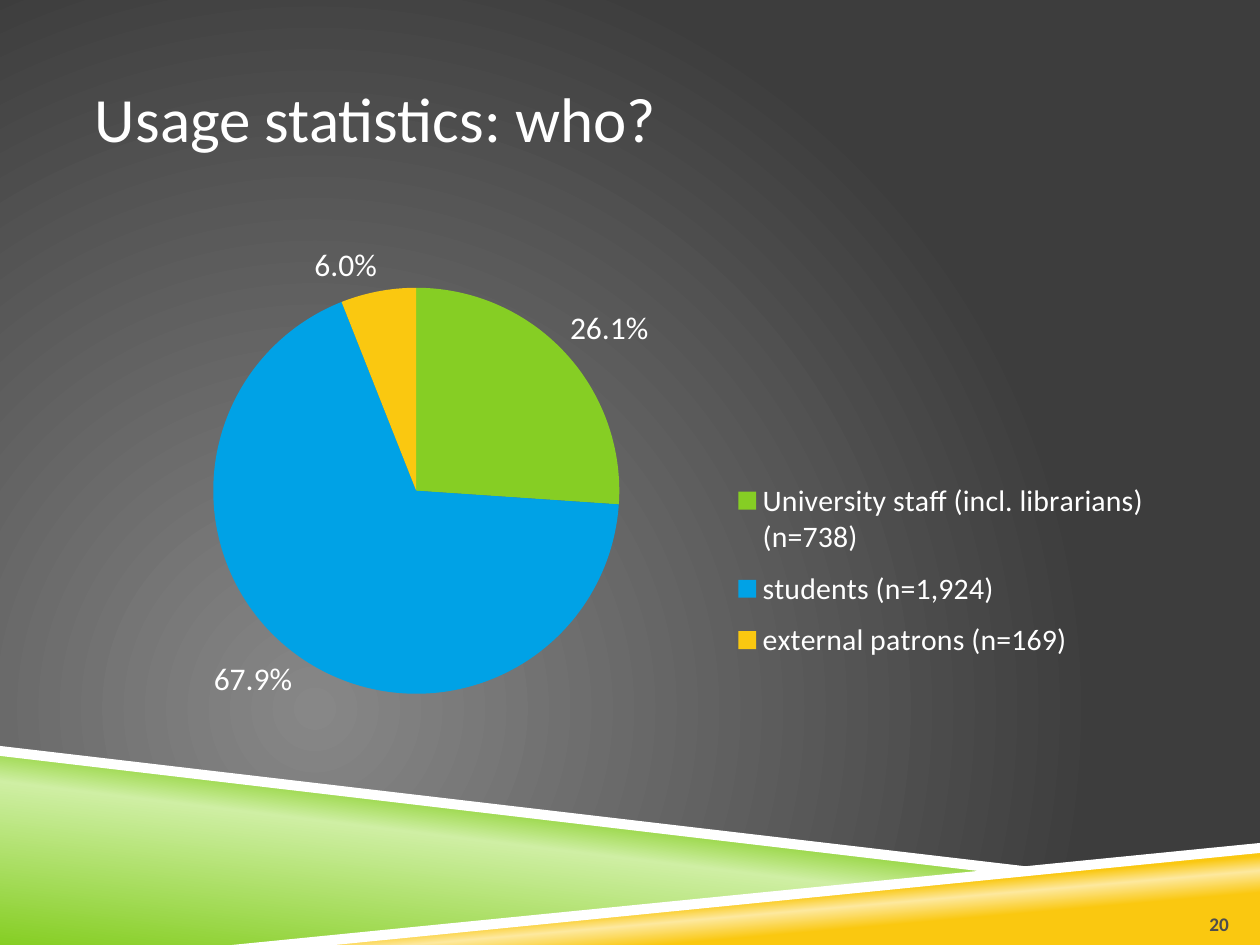
from lxml import etree
from pptx import Presentation
from pptx.chart.data import CategoryChartData
from pptx.dml.color import RGBColor
from pptx.enum.chart import XL_CHART_TYPE, XL_LABEL_POSITION, XL_LEGEND_POSITION
from pptx.enum.text import MSO_ANCHOR, PP_ALIGN
from pptx.oxml import parse_xml
from pptx.oxml.ns import nsdecls, qn
from pptx.util import Pt

PIE, OUTSIDE = XL_CHART_TYPE.PIE, XL_LABEL_POSITION.OUTSIDE_END
LEGEND_RIGHT = XL_LEGEND_POSITION.RIGHT
MIDDLE, BOTTOM = MSO_ANCHOR.MIDDLE, MSO_ANCHOR.BOTTOM
LEFT, RIGHT = PP_ALIGN.LEFT, PP_ALIGN.RIGHT

SCALE = 914400 / 126  # EMU per px
WIDTH, HEIGHT = 1260, 945
FONT = "Calibri"
WHITE = RGBColor(0xFF, 0xFF, 0xFF)
GREY = RGBColor(0x87, 0x87, 0x87)
CHARCOAL = RGBColor(0x3D, 0x3D, 0x3D)
NUMBER_GREY = RGBColor(0x4D, 0x4D, 0x4D)
GREEN = RGBColor(0x86, 0xCE, 0x24)
PALE_GREEN = RGBColor(0xCF, 0xEF, 0xA4)
BLUE = RGBColor(0x00, 0xA2, 0xE6)
YELLOW = RGBColor(0xFA, 0xC8, 0x10)
PALE_YELLOW = RGBColor(0xFD, 0xE9, 0x9F)

GROUPS = [
    ("University staff (incl. librarians) (n=738)", 26.1, GREEN),
    ("students (n=1,924)", 68, BLUE),
    ("external patrons (n=169)", 6, YELLOW),
]


def px(n):
    return round(n * SCALE)


def set_gradient(owner, fill, stops, angle=None):
    """Linear gradient at an angle in degrees, or a circular one without it."""
    fill.gradient()
    grad = next(owner.iter(qn("a:gradFill")))
    for child in list(grad):
        grad.remove(child)
    gs_list = etree.SubElement(grad, qn("a:gsLst"))
    for pos, color in stops:
        gs = etree.SubElement(gs_list, qn("a:gs"), pos=str(pos * 1000))
        etree.SubElement(gs, qn("a:srgbClr"), val=str(color))
    if angle is not None:
        etree.SubElement(grad, qn("a:lin"), ang=str(angle * 60000), scaled="0")
    else:
        circle = etree.SubElement(grad, qn("a:path"), path="circle")
        etree.SubElement(circle, qn("a:fillToRect"),
                         l="50000", t="100000", r="100000", b="50000")


def add_polygon(s, points):
    builder = s.shapes.build_freeform(*points[0], scale=SCALE)
    builder.add_line_segments(points[1:], close=True)
    sp = builder.convert_to_shape()
    sp.shadow.inherit = False
    sp.line.fill.background()
    return sp


def add_bands(s, w, h):
    """Green and yellow wedges with white edges along the foot of a w by h page."""
    wedges = [
        ([(0, h - 193), (998, h - 73), (252, h), (0, h)],
         [(0, GREEN), (52, PALE_GREEN), (66, GREEN)], 277),
        ([(250, h), (w, h - 98), (w, h)],
         [(28, YELLOW), (40, PALE_YELLOW), (48, YELLOW)], 265),
    ]
    edges = [
        [(0, h - 199), (0, h - 189), (995, h - 72), (1048, h - 76)],
        [(w, h - 102), (232, h), (335, h), (w, h - 92)],
    ]
    for points, stops, angle in wedges:
        sp = add_polygon(s, points)
        set_gradient(sp._element, sp.fill, stops, angle)
    for points in edges:
        sp = add_polygon(s, points)
        sp.fill.solid()
        sp.fill.fore_color.rgb = WHITE


def set_text(sp, text, size, color, align, anchor, bold=False, bottom=0):
    tf = sp.text_frame
    tf.word_wrap = True
    tf.vertical_anchor = anchor
    tf.margin_left = tf.margin_right = 0
    tf.margin_top, tf.margin_bottom = px(6), px(bottom)
    p = tf.paragraphs[0]
    p.text = text
    p.alignment = align
    p.font.name, p.font.size, p.font.bold = FONT, Pt(size), bold
    p.font.color.rgb = color


def set_font(font, size):
    font.name, font.size = FONT, Pt(size)
    font.color.rgb = WHITE


def add_title(s, x, y, w, h):
    title = s.shapes.title
    title.left, title.top, title.width, title.height = map(px, (x, y, w, h))
    set_text(title, "Usage statistics: who?", 36, WHITE, LEFT, MIDDLE, bottom=6)


def chart_layout(x, y, w, h, inner=False):
    """Manual layout in fractions of the chart area."""
    target = '<c:layoutTarget val="inner"/>' if inner else ""
    values = zip("xywh", (x, y, w, h))
    return parse_xml(
        f'<c:layout {nsdecls("c")}><c:manualLayout>{target}'
        '<c:xMode val="edge"/><c:yMode val="edge"/>'
        + "".join(f'<c:{k} val="{v}"/>' for k, v in values)
        + "</c:manualLayout></c:layout>")


def replace_layout(parent, layout, index):
    for old in parent.findall(qn("c:layout")):
        parent.remove(old)
    parent.insert(index, layout)


def add_usage_pie(s, x, y, w, h):
    names, values, colors = zip(*GROUPS)
    data = CategoryChartData()
    data.categories = names
    data.add_series("Series 1", values)
    chart = s.shapes.add_chart(PIE, *map(px, (x, y, w, h)), data).chart
    chart.has_title = False
    set_font(chart.font, 18)

    plot = chart.plots[0]
    for i, color in enumerate(colors):
        fill = plot.series[0].points[i].format.fill
        fill.solid()
        fill.fore_color.rgb = color
    plot.has_data_labels = True
    labels = plot.data_labels
    labels.show_percentage, labels.show_value = True, False
    labels.number_format, labels.number_format_is_linked = "0.0%", False
    labels.position = OUTSIDE
    set_font(labels.font, 18)

    chart.has_legend = True
    legend = chart.legend
    legend.position, legend.include_in_layout = LEGEND_RIGHT, False
    set_font(legend.font, 17)
    plot_area = next(chart._chartSpace.iter(qn("c:plotArea")))
    replace_layout(plot_area, chart_layout(0.11, 0.13, 0.38, 0.79, inner=True), 0)
    replace_layout(legend._element, chart_layout(0.59, 0.48, 0.4, 0.4), 1)


def add_page_number(s, x, y, w, h):
    box = s.shapes.add_textbox(*map(px, (x, y, w, h)))
    set_text(box, "20", 11, NUMBER_GREY, RIGHT, BOTTOM, bold=True)


def main():
    prs = Presentation()
    prs.slide_width, prs.slide_height = px(WIDTH), px(HEIGHT)
    s = prs.slides.add_slide(prs.slide_layouts[5])
    set_gradient(s._element, s.background.fill, [(0, GREY), (100, CHARCOAL)])
    add_bands(s, WIDTH, HEIGHT)
    add_title(s, 95, 38, 1071, 158)
    add_usage_pie(s, 95, 221, 1071, 514)
    add_page_number(s, 1166, 885, 63, 50)
    prs.save("out.pptx")


if __name__ == "__main__":
    main()
